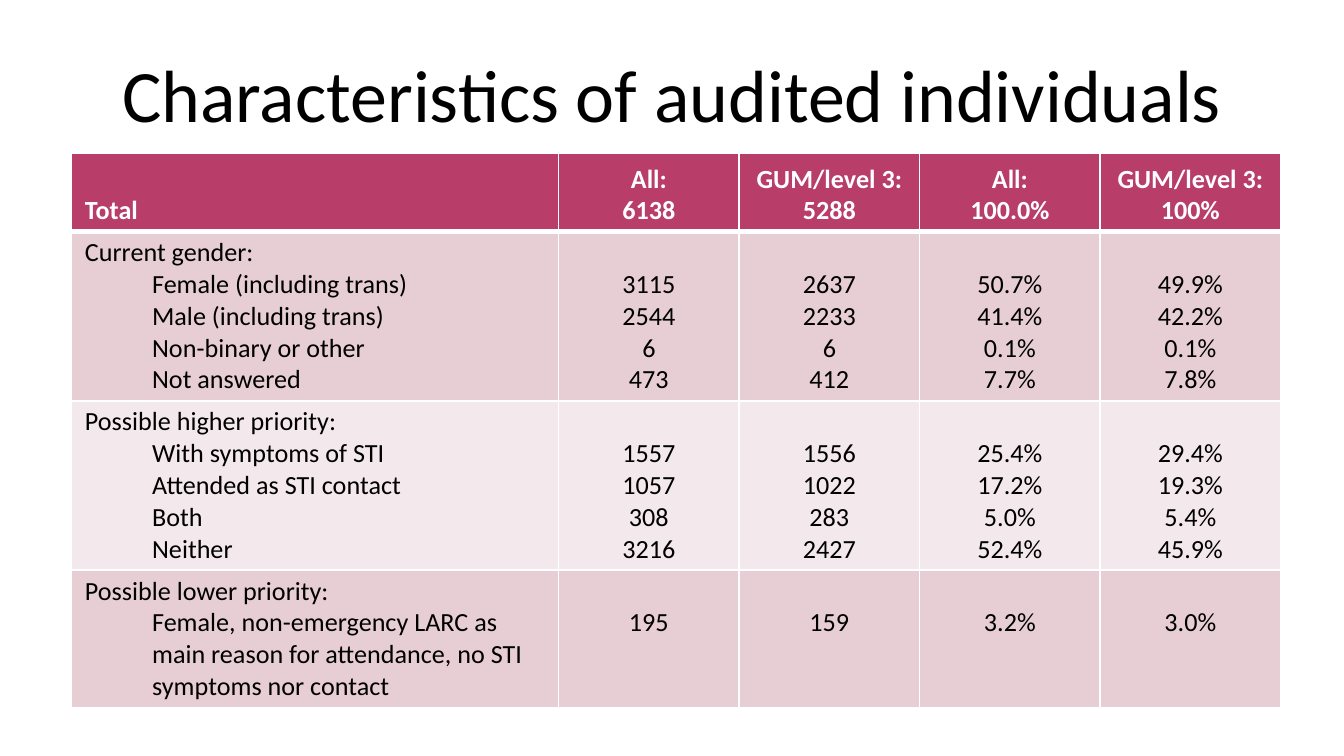
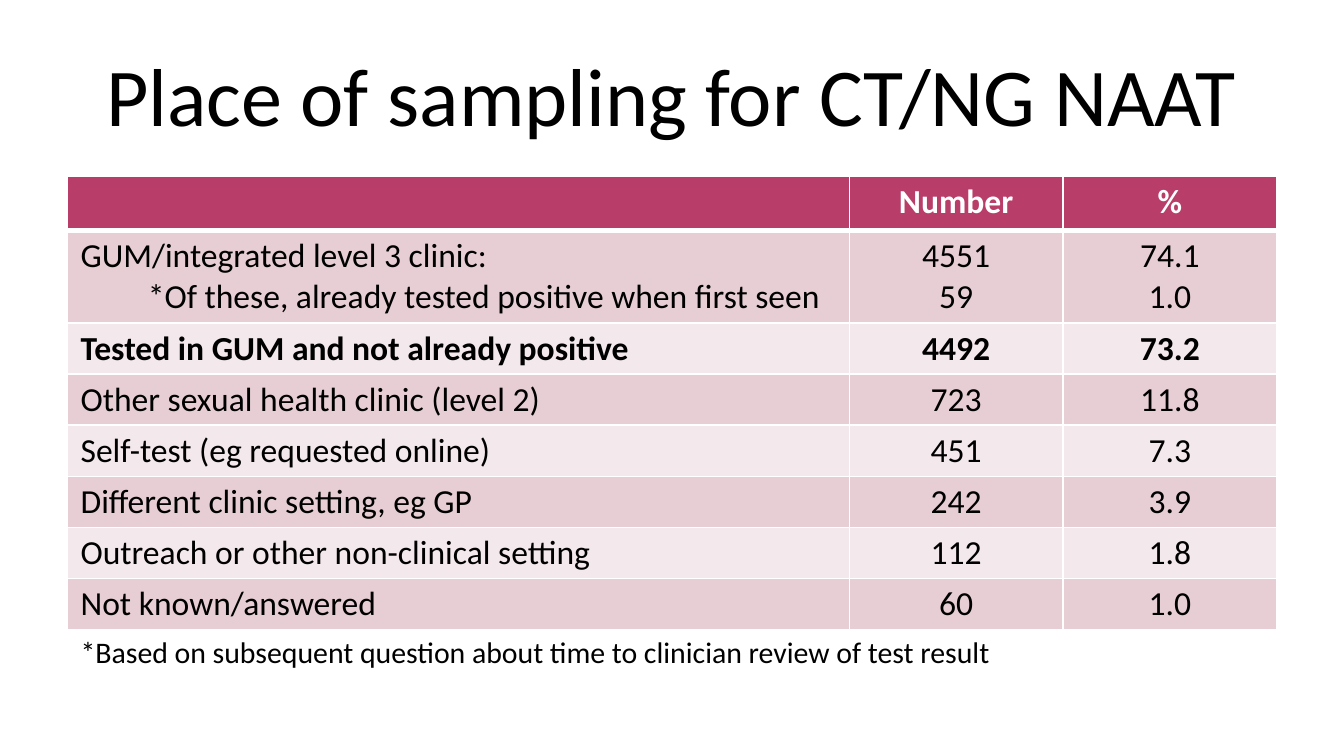
from lxml import etree
from pptx import Presentation
from pptx.dml.color import RGBColor
from pptx.enum.text import MSO_ANCHOR, MSO_AUTO_SIZE, PP_ALIGN
from pptx.oxml.ns import qn
from pptx.util import Pt

LEFT, CENTER = PP_ALIGN.LEFT, PP_ALIGN.CENTER
TOP, MIDDLE, BOTTOM = MSO_ANCHOR.TOP, MSO_ANCHOR.MIDDLE, MSO_ANCHOR.BOTTOM
NO_AUTOFIT = MSO_AUTO_SIZE.NONE
TITLE_ONLY = 5
LINE_HEIGHT = 1.22


def rgb(value):
    return RGBColor.from_string(value)


def write(p, text, size, font="Calibri", color="000000", bold=False, align=LEFT, indent=0):
    p.alignment = align
    if indent:
        p.level = 1
        pPr = p._p.get_or_add_pPr()
        pPr.set("marL", str(Pt(indent)))
        pPr.set("indent", "0")
    r = p.add_run()
    r.text = text
    r.font.name = font
    r.font.size = Pt(size)
    r.font.bold = bold
    r.font.color.rgb = rgb(color)


class Deck:
    white = "FFFFFF"
    header = "B83D68"
    bands = ("E6CED4", "F3E8EB")
    indent = 36
    pad_x, pad_y = 7.2, 2.7

    def __init__(self):
        self.prs = Presentation()
        self.prs.slide_width, self.prs.slide_height = Pt(720), Pt(405)
        self.s = None

    def slide(self, title, size):
        self.s = self.prs.slides.add_slide(self.prs.slide_layouts[TITLE_ONLY])
        sp = self.s.shapes.title
        sp.left, sp.top, sp.width, sp.height = Pt(36), Pt(16.25), Pt(648), Pt(67.5)
        tf = sp.text_frame
        tf.word_wrap = True
        tf.auto_size = NO_AUTOFIT
        tf.vertical_anchor = MIDDLE
        write(tf.paragraphs[0], title, size, align=CENTER)

    def borders(self, cell, top=1, bottom=1):
        tcPr = cell._tc.get_or_add_tcPr()
        widths = {"lnL": 1, "lnR": 1, "lnT": top, "lnB": bottom}
        for i, (tag, width) in enumerate(widths.items()):
            ln = etree.Element(qn(f"a:{tag}"), w=str(Pt(width)))
            fill = etree.SubElement(ln, qn("a:solidFill"))
            etree.SubElement(fill, qn("a:srgbClr"), val=self.white)
            tcPr.insert(i, ln)

    def cell(self, cell, text, size, fill=None, drop=0, anchor=TOP, indent=0, **fmt):
        cell.margin_left = cell.margin_right = Pt(self.pad_x)
        cell.margin_top, cell.margin_bottom = Pt(self.pad_y + drop), Pt(self.pad_y)
        cell.vertical_anchor = anchor
        if fill:
            cell.fill.solid()
            cell.fill.fore_color.rgb = rgb(fill)
        else:
            cell.fill.background()
        if not text:
            return
        tf = cell.text_frame
        for i, line in enumerate(text.split("\n")):
            p = tf.add_paragraph() if i else tf.paragraphs[0]
            write(p, line, size, indent=indent if i else 0, **fmt)

    def table(self, left, top, widths, heights, rows, size,
              head_anchor=TOP, group_heads=False, bold_rows=(), note=None):
        count = len(heights)
        tbl = self.s.shapes.add_table(count, len(widths), Pt(left), Pt(top),
                                      Pt(sum(widths)), Pt(sum(heights))).table
        for col, width in zip(tbl.columns, widths):
            col.width = Pt(width)
        for row, height in zip(tbl.rows, heights):
            row.height = Pt(height)
        for i, values in enumerate(rows):
            for j, text in enumerate(values):
                fmt = {"align": CENTER if j else LEFT, "bold": i == 0 or i in bold_rows}
                if i == 0:
                    fmt.update(fill=self.header, color=self.white, anchor=head_anchor)
                else:
                    fmt.update(fill=self.bands[(i - 1) % 2])
                    if j == 0:
                        fmt["indent"] = self.indent
                    elif group_heads:
                        fmt["drop"] = size * LINE_HEIGHT
                self.cell(tbl.cell(i, j), text, size, **fmt)
        if note:
            tbl.cell(count - 1, 0).merge(tbl.cell(count - 1, len(widths) - 1))
            self.cell(tbl.cell(count - 1, 0), note, 16)
        for i in range(count):
            for j in range(len(widths)):
                self.borders(tbl.cell(i, j), top=3 if i == 1 else 1, bottom=3 if i == 0 else 1)


CHARACTERISTICS = [
    ("Total", "All:\n6138", "GUM/level 3:\n5288", "All:\n100.0%", "GUM/level 3:\n100%"),
    ("Current gender:\nFemale (including trans)\nMale (including trans)\n"
     "Non-binary or other\nNot answered",
     "3115\n2544\n6\n473", "2637\n2233\n6\n412",
     "50.7%\n41.4%\n0.1%\n7.7%", "49.9%\n42.2%\n0.1%\n7.8%"),
    ("Possible higher priority:\nWith symptoms of STI\nAttended as STI contact\nBoth\nNeither",
     "1557\n1057\n308\n3216", "1556\n1022\n283\n2427",
     "25.4%\n17.2%\n5.0%\n52.4%", "29.4%\n19.3%\n5.4%\n45.9%"),
    ("Possible lower priority:\nFemale, non-emergency LARC as main reason for attendance, "
     "no STI symptoms nor contact", "195", "159", "3.2%", "3.0%"),
]

SAMPLING = [
    ("", "Number", "%"),
    ("GUM/integrated level 3 clinic:\n*Of these, already tested positive when first seen",
     "4551\n59", "74.1\n1.0"),
    ("Tested in GUM and not already positive", "4492", "73.2"),
    ("Other sexual health clinic (level 2)", "723", "11.8"),
    ("Self-test (eg requested online)", "451", "7.3"),
    ("Different clinic setting, eg GP", "242", "3.9"),
    ("Outreach or other non-clinical setting", "112", "1.8"),
    ("Not known/answered", "60", "1.0"),
]


def main():
    d = Deck()
    d.slide("Characteristics of audited individuals", 39.6)
    d.table(38.3, 82, [261] + [96.7] * 4, [42.2, 90.4, 90.4, 73], CHARACTERISTICS, 14,
            head_anchor=BOTTOM, group_heads=True)
    d.slide("Place of sampling for CT/NG NAAT", 44)
    d.table(36, 94.5, [419, 114.5, 114.5], [29.2, 48.5] + [27.4] * 7, SAMPLING, 18,
            bold_rows=(2,),
            note="*Based on subsequent question about time to clinician review of test result")
    d.prs.save("out.pptx")


if __name__ == "__main__":
    main()
